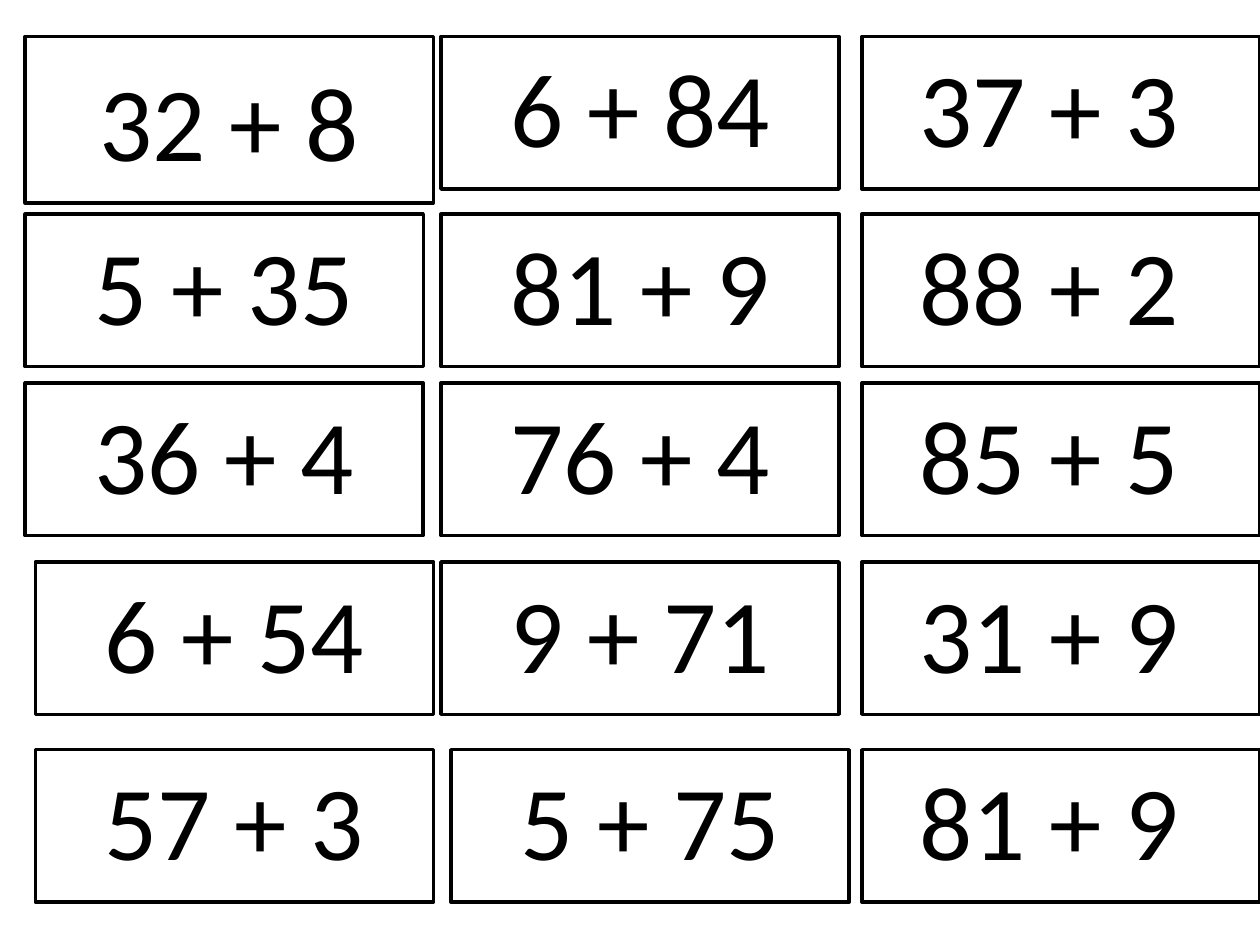
from dataclasses import dataclass

from lxml import etree
from pptx import Presentation
from pptx.dml.color import RGBColor
from pptx.enum.shapes import MSO_SHAPE
from pptx.enum.text import MSO_ANCHOR, MSO_AUTO_SIZE, PP_ALIGN
from pptx.oxml.ns import qn
from pptx.util import Pt

RECTANGLE = MSO_SHAPE.RECTANGLE
TOP, MIDDLE = MSO_ANCHOR.TOP, MSO_ANCHOR.MIDDLE
CENTER = PP_ALIGN.CENTER
NO_AUTOFIT = MSO_AUTO_SIZE.NONE
BLACK = RGBColor(0x00, 0x00, 0x00)
WHITE = RGBColor(0xFF, 0xFF, 0xFF)

CARD_WIDTH, CARD_HEIGHT = 227.5, 87.1
HANGING_INDENT = Pt(27)
ROW_TOPS = (20.9, 122.4, 218.9, 321.1, 428.4)
COLUMN_LEFTS = (
    (14.4, 14.4, 14.4, 20.2, 20.2),
    (252, 252, 252, 252, 257.8),
    (492.5,) * 5,
)
SUMS = (
    ("32 + 8", "5 + 35", "36 + 4", "6 + 54", "57 + 3"),
    ("6 + 84", "81 + 9", "76 + 4", "9 + 71", "5 + 75"),
    ("37 + 3 ", "88 + 2 ", "85 + 5 ", "31 + 9 ", "81 + 9 "),
)


@dataclass(frozen=True)
class Card:
    sum_text: str
    left: float
    top: float
    width: float = CARD_WIDTH
    height: float = CARD_HEIGHT


def format_card(shape, card: Card, anchor: MSO_ANCHOR) -> None:
    shape.left, shape.top = Pt(card.left), Pt(card.top)
    shape.width, shape.height = Pt(card.width), Pt(card.height)
    shape.fill.solid()
    shape.fill.fore_color.rgb = WHITE
    shape.line.color.rgb = BLACK
    shape.line.width = Pt(2)
    frame = shape.text_frame
    frame.word_wrap = True
    frame.auto_size = NO_AUTOFIT
    frame.vertical_anchor = anchor
    paragraph = frame.paragraphs[0]
    paragraph.alignment = CENTER
    run = paragraph.add_run()
    run.text = card.sum_text
    run.font.name = "Calibri"
    run.font.size = Pt(60)
    run.font.color.rgb = BLACK


def format_list_card(shape, card: Card) -> None:
    format_card(shape, card, TOP)
    paragraph = shape.text_frame.paragraphs[0]
    paragraph.space_before = Pt(3)
    properties = paragraph._p.get_or_add_pPr()
    properties.set("marL", str(HANGING_INDENT))
    properties.set("indent", str(-HANGING_INDENT))
    etree.SubElement(properties, qn("a:buNone"))


def add_card(slide, card: Card) -> None:
    shape = slide.shapes.add_shape(
        RECTANGLE, Pt(card.left), Pt(card.top), Pt(card.width), Pt(card.height)
    )
    shape.shadow.inherit = False
    format_list_card(shape, card)


def main() -> None:
    presentation = Presentation()
    presentation.slide_width, presentation.slide_height = Pt(720), Pt(540)
    slide = presentation.slides.add_slide(presentation.slide_layouts[1])

    cards = [
        Card(sum_text, left, top)
        for sums, lefts in zip(SUMS, COLUMN_LEFTS)
        for sum_text, left, top in zip(sums, lefts, ROW_TOPS)
    ]
    first, second, *others = cards
    title_card = Card(first.sum_text, first.left, first.top, 233.3, 95)
    format_card(slide.shapes.title, title_card, MIDDLE)
    format_list_card(slide.placeholders[1], second)
    for card in others:
        add_card(slide, card)

    presentation.save("out.pptx")


if __name__ == "__main__":
    main()
